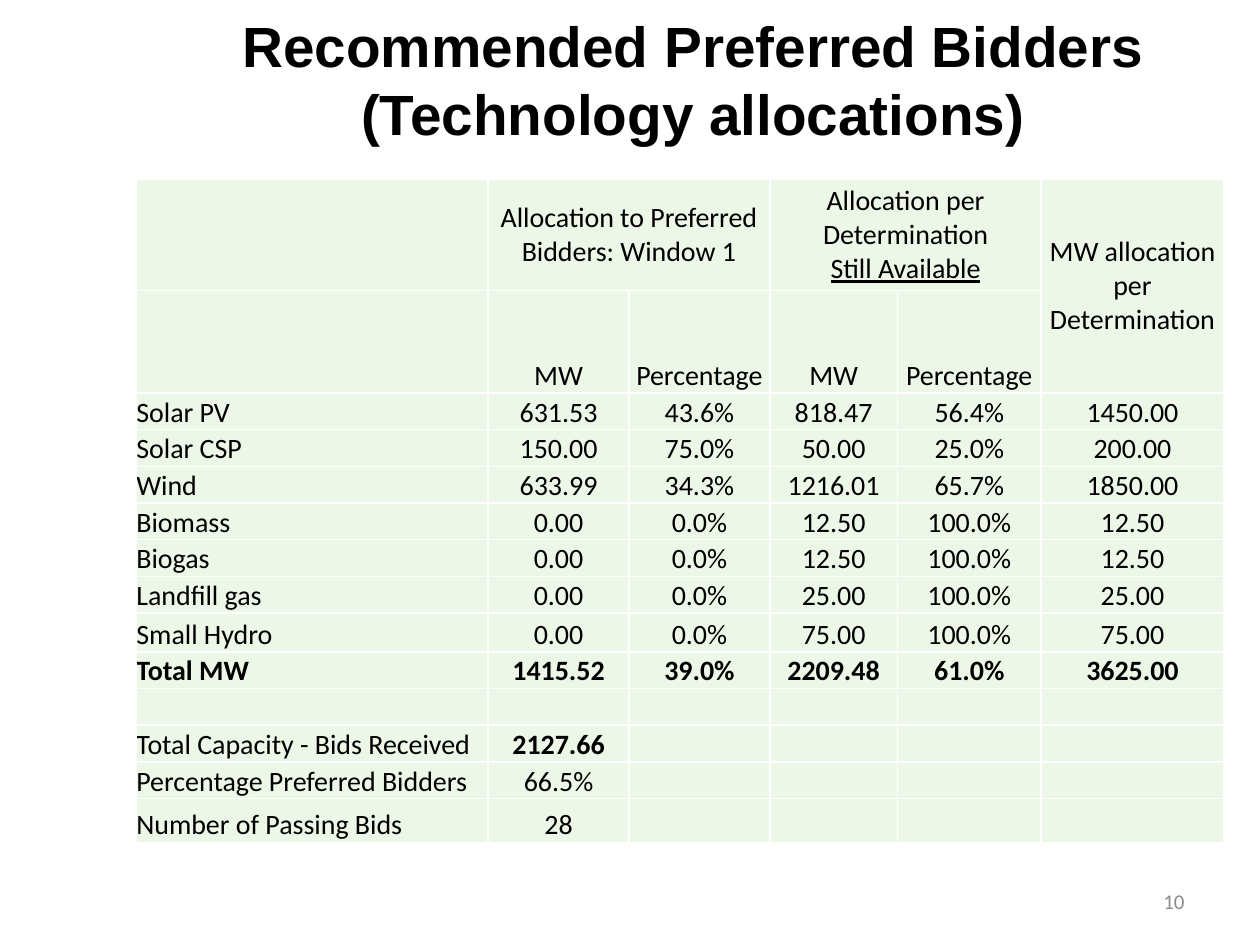
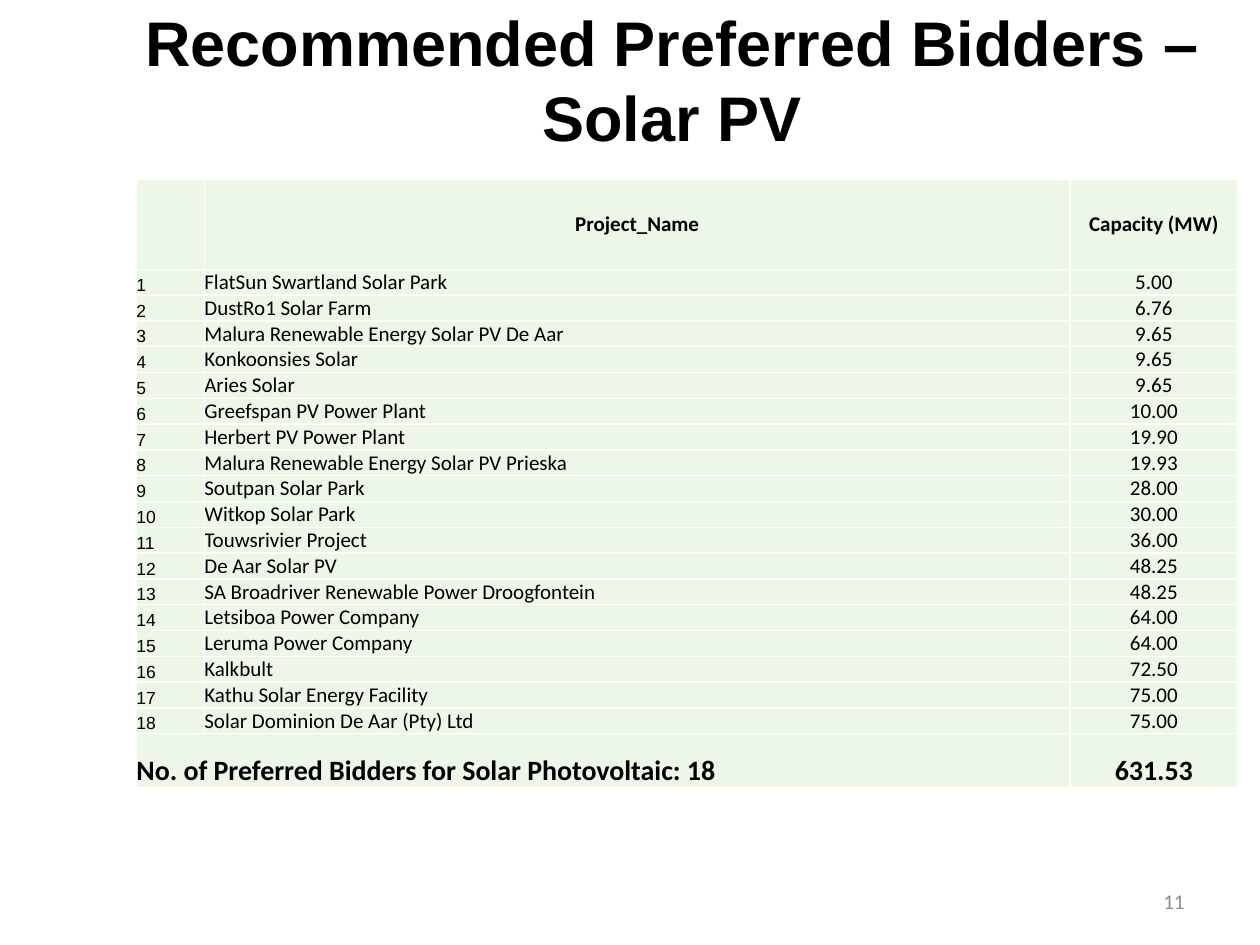
import pptx
import pptx.util
import pptx.dml.color
import pptx.enum.text
import pptx.oxml.ns
import lxml.etree

Cm, Pt = pptx.util.Cm, pptx.util.Pt
ALIGN, ANCHOR = pptx.enum.text.PP_ALIGN, pptx.enum.text.MSO_ANCHOR
qn = pptx.oxml.ns.qn

COLOURS = {"text": "000000", "page": "8C8C8C", "cell": "ECF7E8", "border": "FFFFFF"}

ALLOCATION_TITLE = ["Recommended Preferred Bidders", "(Technology allocations)"]
ALLOCATION_HEADS = [
    ["", "Allocation to Preferred Bidders: Window 1", "",
     "Allocation per Determination\nStill Available", "", "MW allocation per Determination"],
    ["", "MW", "Percentage", "MW", "Percentage", ""],
]
TECHNOLOGIES = [
    ["Solar PV", "631.53", "43.6%", "818.47", "56.4%", "1450.00"],
    ["Solar CSP", "150.00", "75.0%", "50.00", "25.0%", "200.00"],
    ["Wind", "633.99", "34.3%", "1216.01", "65.7%", "1850.00"],
    ["Biomass", "0.00", "0.0%", "12.50", "100.0%", "12.50"],
    ["Biogas", "0.00", "0.0%", "12.50", "100.0%", "12.50"],
    ["Landfill gas", "0.00", "0.0%", "25.00", "100.0%", "25.00"],
    ["Small Hydro", "0.00", "0.0%", "75.00", "100.0%", "75.00"],
    ["Total MW", "1415.52", "39.0%", "2209.48", "61.0%", "3625.00"],
]
BID_SUMMARY = [
    [""] * 6,
    ["Total Capacity - Bids Received", "2127.66"] + [""] * 4,
    ["Percentage Preferred Bidders", "66.5%"] + [""] * 4,
    ["Number of Passing Bids", "28"] + [""] * 4,
]
ALLOCATION_WIDTHS = [7.09, 2.84, 2.84, 2.57, 2.9, 3.68]
ALLOCATION_HEIGHTS = [2.25, 2.06] + [0.74] * 6 + [0.78] + [0.74] * 4 + [0.88]
ALLOCATION_MERGES = [(0, 1, 0, 2), (0, 3, 0, 4), (0, 5, 1, 5)]

PROJECTS_TITLE = ["Recommended Preferred Bidders – Solar PV"]
PROJECTS = [
    ("FlatSun Swartland Solar Park", "5.00"),
    ("DustRo1 Solar Farm", "6.76"),
    ("Malura Renewable Energy Solar PV De Aar", "9.65"),
    ("Konkoonsies Solar", "9.65"),
    ("Aries Solar", "9.65"),
    ("Greefspan PV Power Plant", "10.00"),
    ("Herbert PV Power Plant", "19.90"),
    ("Malura Renewable Energy Solar PV Prieska", "19.93"),
    ("Soutpan Solar Park", "28.00"),
    ("Witkop Solar Park", "30.00"),
    ("Touwsrivier Project", "36.00"),
    ("De Aar Solar PV", "48.25"),
    ("SA Broadriver Renewable Power Droogfontein", "48.25"),
    ("Letsiboa Power Company", "64.00"),
    ("Leruma Power Company", "64.00"),
    ("Kalkbult", "72.50"),
    ("Kathu Solar Energy Facility", "75.00"),
    ("Solar Dominion De Aar (Pty) Ltd", "75.00"),
]
PROJECTS_HEAD = ["", "Project_Name", "Capacity (MW)"]
PROJECTS_TOTAL = ["No. of Preferred Bidders for Solar Photovoltaic: 18", "", "631.53"]
PROJECTS_WIDTHS = [1.37, 17.45, 3.38]
PROJECTS_HEIGHTS = [1.82] + [0.52] * len(PROJECTS) + [1.09]


def add_run(paragraph, text, size, font="Calibri", bold=False, colour="text", underline=False):
    run = paragraph.add_run()
    run.text = text
    run.font.size = Pt(size)
    run.font.name = font
    run.font.bold = bold
    if underline:
        run.font.underline = True
    run.font.color.rgb = pptx.dml.color.RGBColor.from_string(COLOURS[colour])


def add_box(slide, left, top, width, height, align):
    box = slide.shapes.add_textbox(Cm(left), Cm(top), Cm(width), Cm(height))
    box.text_frame.word_wrap = True
    box.text_frame.vertical_anchor = ANCHOR.MIDDLE
    paragraph = box.text_frame.paragraphs[0]
    paragraph.alignment = align
    return paragraph


def add_slide(deck, title_lines, title_left, title_size, page):
    slide = deck.slides.add_slide(deck.slide_layouts[6])
    title = add_box(slide, title_left, 0, 22.86, 3.18, ALIGN.CENTER)
    for index, line in enumerate(title_lines):
        if index:
            title.add_line_break()
        add_run(title, line, title_size, "Arial", True)
    footer = add_box(slide, 18.21, 17.65, 5.92, 1.02, ALIGN.RIGHT)
    add_run(footer, page, 12, colour="page")
    return slide


def style_cell(cell):
    cell.margin_left = cell.margin_right = cell.margin_top = cell.margin_bottom = 0
    properties = cell._tc.get_or_add_tcPr()
    for side in ("a:lnL", "a:lnR", "a:lnT", "a:lnB"):
        line = lxml.etree.SubElement(properties, qn(side), w=str(Pt(1)))
        fill = lxml.etree.SubElement(line, qn("a:solidFill"))
        lxml.etree.SubElement(fill, qn("a:srgbClr"), val=COLOURS["border"])
    cell.fill.solid()
    cell.fill.fore_color.rgb = pptx.dml.color.RGBColor.from_string(COLOURS["cell"])


def add_grid(slide, rows, widths, heights, merges, style_for):
    table = slide.shapes.add_table(
        len(rows), len(widths), Cm(2.75), Cm(3.61), Cm(sum(widths)), Cm(sum(heights))).table
    table.first_row = table.horz_banding = False
    for column, width in zip(table.columns, widths):
        column.width = Cm(width)
    for row, height in zip(table.rows, heights):
        row.height = Cm(height)
    for r, row in enumerate(rows):
        for c, text in enumerate(row):
            cell = table.cell(r, c)
            style_cell(cell)
            font, align, anchor = style_for(r, c)
            cell.vertical_anchor = anchor
            for index, line in enumerate(text.split("\n")):
                frame = cell.text_frame
                paragraph = frame.add_paragraph() if index else frame.paragraphs[0]
                paragraph.alignment = align
                if line:
                    add_run(paragraph, line, underline=index > 0, **font)
                else:
                    lxml.etree.SubElement(
                        paragraph._p, qn("a:endParaRPr"), sz=str(font["size"] * 100))
    for top, left, bottom, right in merges:
        table.cell(top, left).merge(table.cell(bottom, right))


def allocation_style(r, c):
    total_row = len(ALLOCATION_HEADS) + len(TECHNOLOGIES) - 1
    received_row = total_row + 2
    bold = r == total_row or (r, c) == (received_row, 1)
    align = ALIGN.CENTER if c else ALIGN.LEFT
    return {"size": 16, "bold": bold}, align, ANCHOR.BOTTOM if r else ANCHOR.MIDDLE


def project_style(r, c):
    total_row = len(PROJECTS) + 1
    if r == 0:
        return {"size": 12, "bold": True}, ALIGN.CENTER, ANCHOR.MIDDLE
    if r == total_row:
        font = {"size": 16, "bold": True}
    elif c == 0:
        font = {"size": 10, "font": "Arial"}
    else:
        font = {"size": 12}
    return font, ALIGN.CENTER if c == 2 else ALIGN.LEFT, ANCHOR.BOTTOM


def main():
    deck = pptx.Presentation()
    deck.slide_width, deck.slide_height = Cm(25.4), Cm(19.05)

    allocations = add_slide(deck, ALLOCATION_TITLE, 2.54, 32.4, "10")
    add_grid(allocations, ALLOCATION_HEADS + TECHNOLOGIES + BID_SUMMARY,
             ALLOCATION_WIDTHS, ALLOCATION_HEIGHTS, ALLOCATION_MERGES, allocation_style)

    projects = add_slide(deck, PROJECTS_TITLE, 2.12, 36, "11")
    numbered = [[str(n), *project] for n, project in enumerate(PROJECTS, 1)]
    total_row = len(PROJECTS) + 1
    add_grid(projects, [PROJECTS_HEAD] + numbered + [PROJECTS_TOTAL],
             PROJECTS_WIDTHS, PROJECTS_HEIGHTS, [(total_row, 0, total_row, 1)], project_style)

    deck.save("out.pptx")


if __name__ == "__main__":
    main()
